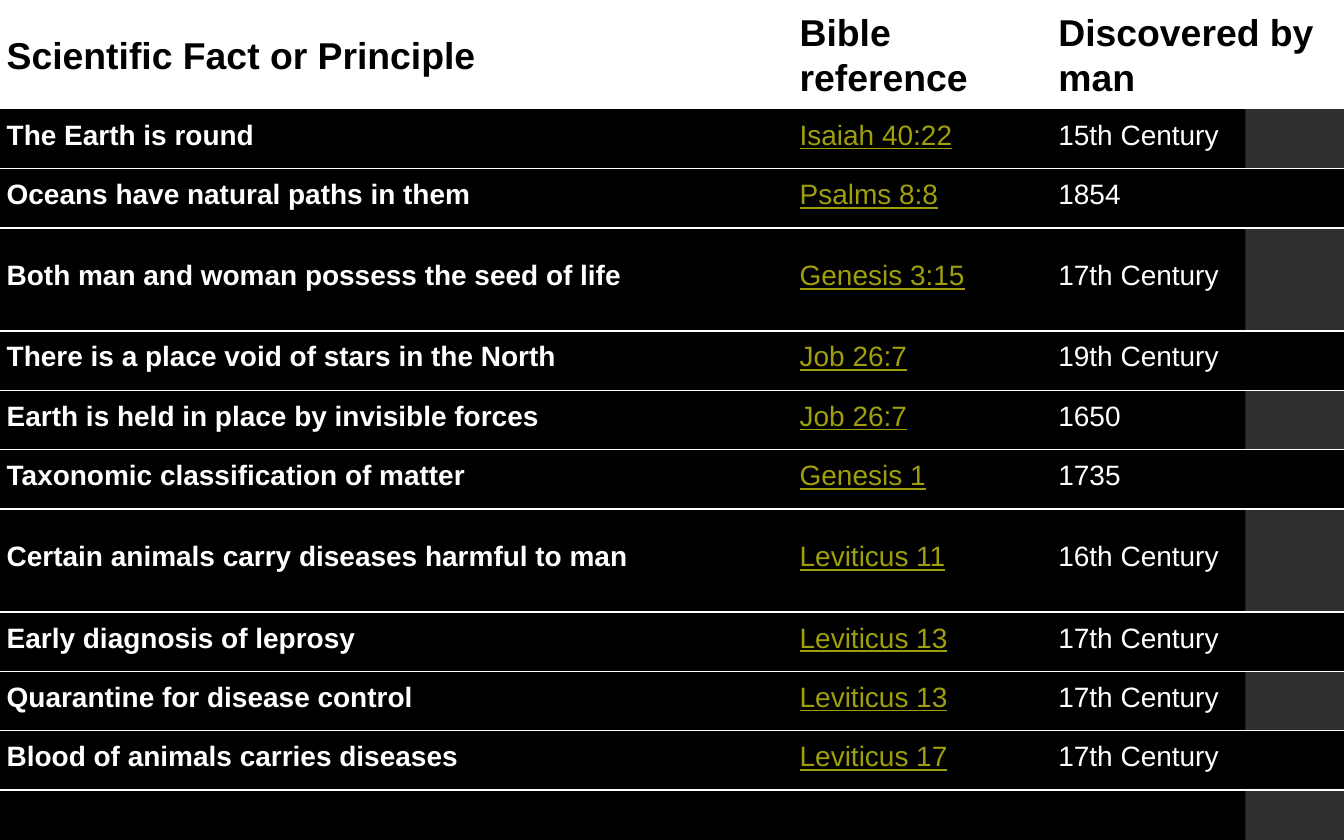
from lxml.etree import SubElement
from pptx import Presentation
from pptx.dml.color import RGBColor
from pptx.enum.shapes import MSO_SHAPE
from pptx.enum.text import MSO_ANCHOR
from pptx.oxml.ns import qn
from pptx.util import Emu, Pt

EMU_PER_PX = 9144  # 100 px to the inch
BLACK, WHITE, GRAY, OLIVE = "000000", "FFFFFF", "303030", "9F9F0B"
NO_STYLE = "{2D5ABB26-0587-4C30-8999-92F81FD0307C}"

COLUMN_WIDTHS = [708, 231, 261]
HEADER_HEIGHT, FACT_HEIGHT, TALL_HEIGHT, LAST_HEIGHT = 80, 53, 92, 60
HEADINGS = ["Scientific Fact or Principle", "Bible reference", "Discovered by man"]
FACTS = [
    ("The Earth is round", "Isaiah 40:22", "15th Century"),
    ("Oceans have natural paths in them", "Psalms 8:8", "1854"),
    ("Both man and woman possess the seed of life", "Genesis 3:15", "17th Century"),
    ("There is a place void of stars in the North", "Job 26:7", "19th Century"),
    ("Earth is held in place by invisible forces", "Job 26:7", "1650"),
    ("Taxonomic classification of matter", "Genesis 1", "1735"),
    ("Certain animals carry diseases harmful to man", "Leviticus 11", "16th Century"),
    ("Early diagnosis of leprosy", "Leviticus 13", "17th Century"),
    ("Quarantine for disease control", "Leviticus 13", "17th Century"),
    ("Blood of animals carries diseases", "Leviticus 17", "17th Century"),
]
TALL_FACTS = (3, 7)


def px(length):
    return Emu(length * EMU_PER_PX)


def rgb(color):
    return RGBColor.from_string(color)


def set_background(slide, color):
    fill = slide.background.fill
    fill.solid()
    fill.fore_color.rgb = rgb(color)


def add_side_band(slide):
    band = slide.shapes.add_shape(MSO_SHAPE.RECTANGLE, px(1112), 0, px(88), px(750))
    band.shadow.inherit = False
    band.fill.solid()
    band.fill.fore_color.rgb = rgb(GRAY)
    band.line.fill.background()


def add_plain_table(slide, heights):
    table = slide.shapes.add_table(
        len(heights), len(COLUMN_WIDTHS), 0, 0, px(sum(COLUMN_WIDTHS)), px(sum(heights))
    ).table
    table.first_row = table.horz_banding = False
    table._tbl.tblPr.find(qn("a:tableStyleId")).text = NO_STYLE
    for column, width in zip(table.columns, COLUMN_WIDTHS):
        column.width = px(width)
    for row, height in zip(table.rows, heights):
        row.height = px(height)
    return table


def add_border(cell, side):
    line = SubElement(cell._tc.get_or_add_tcPr(), qn(f"a:{side}"), w=str(Pt(1)))
    SubElement(SubElement(line, qn("a:solidFill")), qn("a:srgbClr"), val=WHITE)


def fill_cell(cell, color):
    if color is None:
        cell.fill.background()
    else:
        cell.fill.solid()
        cell.fill.fore_color.rgb = rgb(color)


def write_cell(cell, text, size, color, top=1, bold=False, underline=False):
    cell.vertical_anchor = MSO_ANCHOR.MIDDLE
    cell.margin_left, cell.margin_right = px(6), px(4)
    cell.margin_top, cell.margin_bottom = px(top), px(9)
    paragraph = cell.text_frame.paragraphs[0]
    paragraph.line_spacing = 1.07
    run = paragraph.add_run()
    run.text = text
    font = run.font
    font.name, font.size, font.bold, font.underline = "Arial", Pt(size), bold, underline
    font.color.rgb = rgb(color)


def main():
    presentation = Presentation()
    presentation.slide_width, presentation.slide_height = px(1200), px(750)
    slide = presentation.slides.add_slide(presentation.slide_layouts[6])
    set_background(slide, BLACK)
    add_side_band(slide)

    fact_heights = [
        TALL_HEIGHT if number in TALL_FACTS else FACT_HEIGHT
        for number in range(1, len(FACTS) + 1)
    ]
    table = add_plain_table(slide, [HEADER_HEIGHT, *fact_heights, LAST_HEIGHT])

    # Header row
    for column, heading in enumerate(HEADINGS):
        cell = table.cell(0, column)
        fill_cell(cell, WHITE)
        write_cell(cell, heading, 24, BLACK, top=9, bold=True)

    # Facts: odd rows are see-through, even rows black, with a rule between each pair
    for number, fact in enumerate(FACTS, start=1):
        is_even = number % 2 == 0
        for column, text in enumerate(fact):
            cell = table.cell(number, column)
            add_border(cell, "lnT" if is_even else "lnB")
            fill_cell(cell, BLACK if is_even else None)
            is_reference = column == 1
            write_cell(cell, text, 18, OLIVE if is_reference else WHITE,
                       bold=column == 0, underline=is_reference)

    # Empty last row
    for cell in table.rows[len(FACTS) + 1].cells:
        fill_cell(cell, None)

    presentation.save("out.pptx")


if __name__ == "__main__":
    main()
